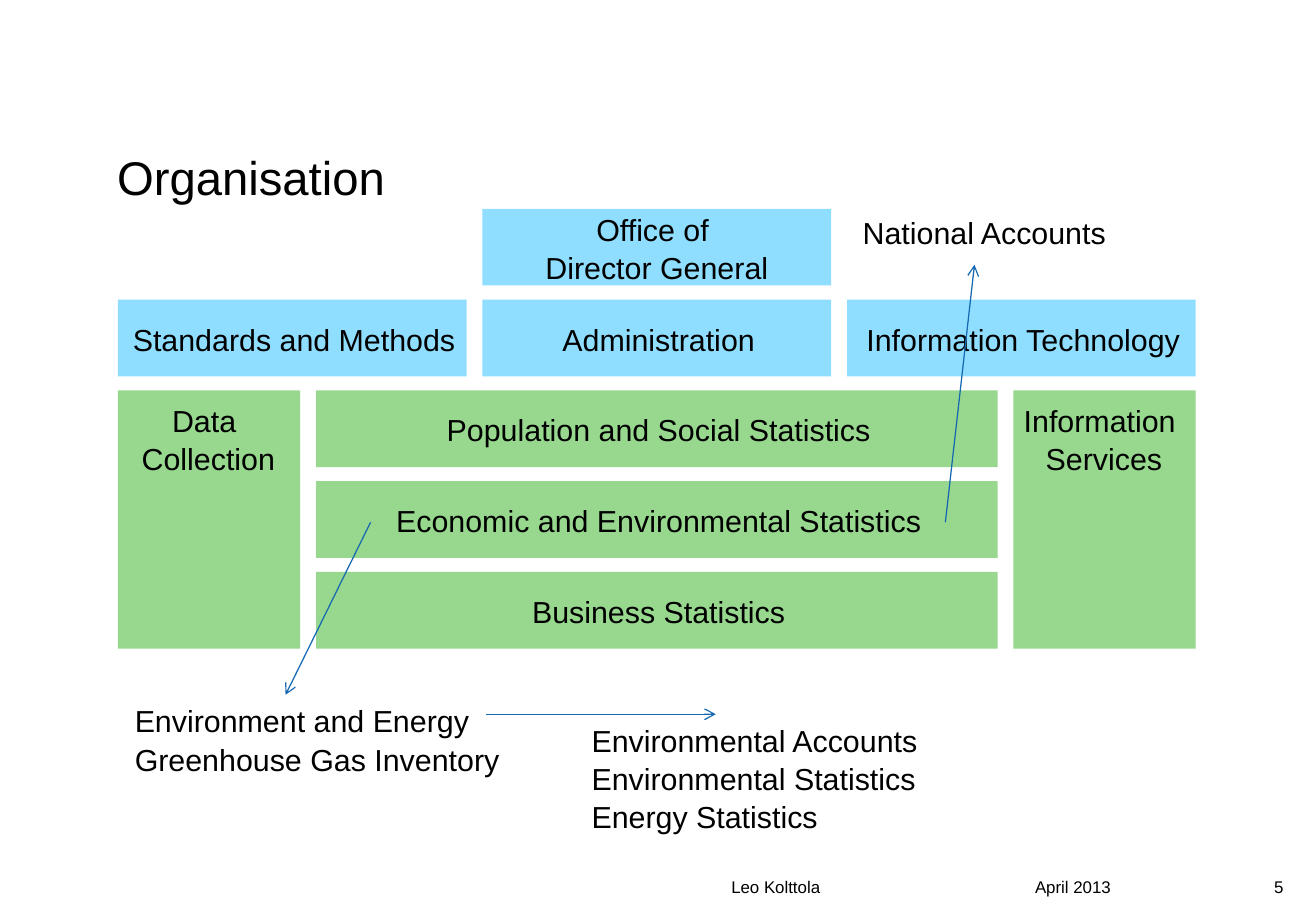
from dataclasses import dataclass

from lxml.etree import SubElement
from pptx import Presentation
from pptx.dml.color import RGBColor
from pptx.enum.shapes import MSO_CONNECTOR, MSO_SHAPE
from pptx.enum.text import MSO_ANCHOR, MSO_AUTO_SIZE, PP_ALIGN
from pptx.oxml.ns import qn
from pptx.util import Inches, Pt


@dataclass(frozen=True)
class Theme:
    """Colours, type sizes and line settings of the slide."""
    font: str = "Arial"
    text: RGBColor = RGBColor(0, 0, 0)
    support: RGBColor = RGBColor(0x90, 0xDE, 0xFF)
    statistics: RGBColor = RGBColor(0x97, 0xD8, 0x8E)
    arrow: RGBColor = RGBColor(0x16, 0x68, 0xB1)
    title: int = 28
    body: int = 18
    footer: int = 10
    leading: float = 1.05
    arrow_width: float = 0.75


@dataclass(frozen=True)
class Box:
    """A rectangle in EMU."""
    left: int
    top: int
    width: int
    height: int

    def point(self, x, y):
        """Return the position at percentages x and y of this box."""
        return round(self.left + self.width * x / 100), round(self.top + self.height * y / 100)

    def share(self, x, y, w, h):
        """Return the box at the given percentages of this box."""
        return Box(*self.point(x, y), round(self.width * w / 100), round(self.height * h / 100))

    def frame(self):
        """Return left, top, width and height."""
        return self.left, self.top, self.width, self.height


THEME = Theme()


def write(tf, lines, size, align, leading=THEME.leading):
    """Fill a text frame with one paragraph per line."""
    for i, line in enumerate(lines):
        p = tf.paragraphs[0] if i == 0 else tf.add_paragraph()
        p.text = line
        p.alignment = align
        p.line_spacing = leading
        p.font.name = THEME.font
        p.font.size = Pt(size)
        p.font.color.rgb = THEME.text


def add_unit(slide, box, text, fill, left=0.12, top=0.05, anchor=MSO_ANCHOR.MIDDLE):
    """Draw one filled unit of the organisation."""
    sp = slide.shapes.add_shape(MSO_SHAPE.RECTANGLE, *box.frame())
    sp.shadow.inherit = False
    sp.fill.solid()
    sp.fill.fore_color.rgb = fill
    sp.line.fill.background()
    tf = sp.text_frame
    tf.word_wrap = False
    tf.vertical_anchor = anchor
    tf.margin_left, tf.margin_top = Inches(left), Inches(top)
    tf.margin_right, tf.margin_bottom = Inches(0.09), Inches(0.05)
    write(tf, [text], THEME.body, PP_ALIGN.CENTER)


def add_label(slide, box, lines, size=THEME.body, align=PP_ALIGN.LEFT):
    """Place free text that fits its box."""
    tf = slide.shapes.add_textbox(*box.frame()).text_frame
    tf.word_wrap = False
    tf.auto_size = MSO_AUTO_SIZE.SHAPE_TO_FIT_TEXT
    write(tf, lines, size, align)


def add_arrow(slide, start, end):
    """Draw a thin arrow between two points."""
    line = slide.shapes.add_connector(MSO_CONNECTOR.STRAIGHT, *start, *end)
    line.line.color.rgb = THEME.arrow
    line.line.width = Pt(THEME.arrow_width)
    sp_pr = line._element.spPr
    SubElement(sp_pr.find(qn("a:ln")), qn("a:tailEnd"), type="arrow")
    SubElement(sp_pr, qn("a:effectLst"))


def draw_organisation(slide, box):
    """Lay out the units on three columns and five rows."""
    col_gap, row_gap, side = 1.47, 3.2, 16.91
    col = (100 - 2 * col_gap) / 3
    row = (100 - 4 * row_gap) / 5
    cols = [i * (col + col_gap) for i in range(3)]
    rows = [i * (row + row_gap) for i in range(5)]

    add_unit(slide, box.share(cols[1], rows[0], col, row),
             "Office of \vDirector General", THEME.support, left=0.09)
    for x, name in zip(cols, ("Standards and Methods", "Administration",
                              "Information Technology")):
        add_unit(slide, box.share(x, rows[1], col, row), name, THEME.support)

    middle = side + col_gap
    for y, name in zip(rows[2:], ("Population and Social Statistics",
                                  "Economic and Environmental Statistics",
                                  "Business Statistics")):
        add_unit(slide, box.share(middle, y, 100 - 2 * middle, row), name, THEME.statistics)
    for x, name in ((0, "Data \vCollection"), (100 - side, "Information \vServices")):
        add_unit(slide, box.share(x, rows[2], side, 100 - rows[2]), name, THEME.statistics,
                 left=0.08, top=0.08, anchor=MSO_ANCHOR.TOP)


def draw_notes(slide, box):
    """Add the title, the notes around the units and the arrows to them."""
    add_label(slide, box.share(7.85, 15.33, 22.44, 7.6), ["Organisation"],
              THEME.title, PP_ALIGN.CENTER)
    add_label(slide, box.share(64.54, 22.67, 20.5, 5.33), ["National Accounts"],
              align=PP_ALIGN.CENTER)
    add_label(slide, box.share(9.33, 76.27, 29.82, 9.47),
              ["Environment and Energy", "Greenhouse Gas Inventory"])
    add_label(slide, box.share(44.04, 78.4, 26.87, 13.47),
              ["Environmental Accounts", "Environmental Statistics", "Energy Statistics"])
    for start, end in (((28.16, 57.33), (21.7, 76.27)),
                       ((36.93, 78.4), (54.39, 78.4)),
                       ((71.84, 57.33), (74.05, 29.07))):
        add_arrow(slide, box.point(*start), box.point(*end))


def draw_footer(slide, box):
    """Write author, date and slide number along the bottom."""
    for x, w, text, align in ((0, 51.05, "Leo Kolttola", PP_ALIGN.LEFT),
                              (52.74, 35.23, "April 2013", PP_ALIGN.LEFT),
                              (87.34, 12.66, "5", PP_ALIGN.RIGHT)):
        tf = slide.shapes.add_textbox(*box.share(x, 0, w, 100).frame()).text_frame
        tf.word_wrap = True
        write(tf, [text], THEME.footer, align, leading=1.0)


def main():
    """Build and save the presentation."""
    prs = Presentation()
    prs.slide_width, prs.slide_height = Inches(10.83), Inches(7.5)
    slide = prs.slides.add_slide(prs.slide_layouts[6])
    page = Box(0, 0, prs.slide_width, prs.slide_height)
    draw_organisation(slide, page.share(8.96, 22.93, 81.9, 48.27))
    draw_notes(slide, page)
    draw_footer(slide, page.share(54.66, 95.6, 43.77, 4.4))
    prs.save("out.pptx")


if __name__ == "__main__":
    main()
